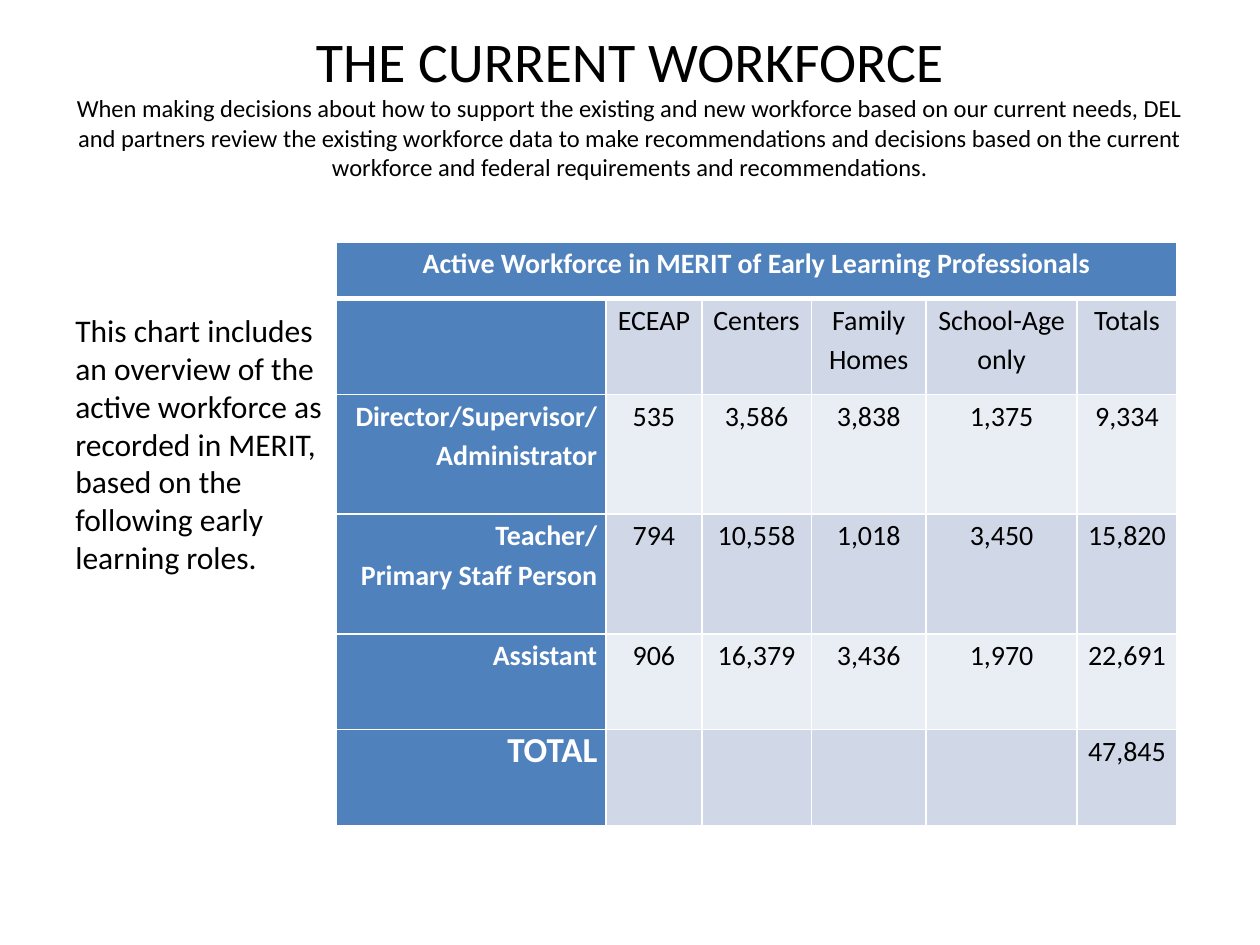
from dataclasses import dataclass

from lxml import etree
from pptx import Presentation
from pptx.dml.color import RGBColor
from pptx.enum.shapes import MSO_SHAPE
from pptx.enum.text import MSO_ANCHOR, PP_ALIGN
from pptx.oxml.ns import qn
from pptx.util import Inches, Pt

CENTER, LEFT, RIGHT = PP_ALIGN.CENTER, PP_ALIGN.LEFT, PP_ALIGN.RIGHT
TOP, MIDDLE = MSO_ANCHOR.TOP, MSO_ANCHOR.MIDDLE
RECTANGLE = MSO_SHAPE.RECTANGLE
FONT = "Calibri"
BLACK, WHITE, BLUE = "000000", "FFFFFF", "4F81BD"
BANDS = ("D0D8E8", "E9EDF4")
TABLE_TITLE = "Active Workforce in MERIT of Early Learning Professionals"
COLUMN_WIDTHS = (2.14, 0.76, 0.87, 0.91, 1.2, 0.79)


@dataclass
class Row:
    """One table row below the title row."""
    label: str
    values: tuple
    height: float
    label_size: int = 16
    label_spacing: float = 1.15


ROWS = (
    Row("", ("ECEAP", "Centers", "Family Homes", "School-Age only", "Totals"), 0.76),
    Row("Director/Supervisor/\nAdministrator",
        ("535", "3,586", "3,838", "1,375", "9,334"), 0.95),
    Row("Teacher/\nPrimary Staff Person",
        ("794", "10,558", "1,018", "3,450", "15,820"), 0.95),
    Row("Assistant", ("906", "16,379", "3,436", "1,970", "22,691"), 0.76),
    Row("TOTAL", ("", "", "", "", "47,845"), 0.76, 20, 1.0),
)


def color(value: str) -> RGBColor:
    """Turn a hex string into a colour."""
    return RGBColor.from_string(value)


def write(frame, text: str, *, size=16, ink=BLACK, bold=False,
          align=CENTER, spacing=1.0, append=False) -> None:
    """Write each line of the text as a formatted paragraph."""
    for index, line in enumerate(text.split("\n")):
        paragraph = frame.add_paragraph() if append or index else frame.paragraphs[0]
        paragraph.alignment = align
        paragraph.line_spacing = spacing
        run = paragraph.add_run()
        run.text = line
        run.font.name = FONT
        run.font.size = Pt(size)
        run.font.bold = bold
        run.font.color.rgb = color(ink)


def style_cell(cell, fill: str, top: int = 1, bottom: int = 1) -> None:
    """Give a cell its margins, white borders and fill."""
    cell.margin_left = cell.margin_right = Inches(0.07)
    cell.margin_top = cell.margin_bottom = 0
    cell.vertical_anchor = TOP
    properties = cell._tc.get_or_add_tcPr()
    for side, width in (("L", 1), ("R", 1), ("T", top), ("B", bottom)):
        line = etree.SubElement(properties, qn(f"a:ln{side}"), w=str(Pt(width)))
        solid = etree.SubElement(line, qn("a:solidFill"))
        etree.SubElement(solid, qn("a:srgbClr"), val=WHITE)
    cell.fill.solid()
    cell.fill.fore_color.rgb = color(fill)


def add_heading(slide) -> None:
    """Add the slide title and its introduction."""
    box = slide.shapes.add_textbox(Inches(0.5), Inches(0.3), Inches(9), Inches(1.25))
    frame = box.text_frame
    frame.word_wrap = True
    frame.vertical_anchor = MIDDLE
    frame.margin_top, frame.margin_bottom = 0, Inches(0.2)
    write(frame, "THE CURRENT WORKFORCE", size=32)
    write(frame, "When making decisions about how to support the existing and new "
          "workforce based on our current needs, DEL and partners review the existing "
          "workforce data to make recommendations and decisions based on the current "
          "workforce and federal requirements and recommendations.",
          size=14, append=True)


def add_explanation(slide) -> None:
    """Add the text panel left of the table."""
    panel = slide.shapes.add_shape(
        RECTANGLE, Inches(0.5), Inches(1.92), Inches(2.17), Inches(4.46))
    panel.shadow.inherit = False
    panel.fill.solid()
    panel.fill.fore_color.rgb = color(WHITE)
    panel.line.fill.background()
    frame = panel.text_frame
    frame.word_wrap = True
    frame.vertical_anchor = TOP
    frame.margin_top = Inches(0.55)
    write(frame, "This chart includes an overview of the active workforce as recorded "
          "in MERIT, based on the following early learning roles.", size=18, align=LEFT)


def add_workforce_table(slide) -> None:
    """Add the table of staff counts by role and setting."""
    heights = [0.45] + [row.height for row in ROWS]
    table = slide.shapes.add_table(
        len(heights), len(COLUMN_WIDTHS), Inches(2.67), Inches(1.92),
        Inches(sum(COLUMN_WIDTHS)), Inches(sum(heights))).table
    for column, width in zip(table.columns, COLUMN_WIDTHS):
        column.width = Inches(width)
    for table_row, height in zip(table.rows, heights):
        table_row.height = Inches(height)

    for cell in table.rows[0].cells:
        style_cell(cell, BLUE, bottom=3)
    title = table.cell(0, 0)
    title.merge(table.cell(0, len(COLUMN_WIDTHS) - 1))
    write(title.text_frame, TABLE_TITLE, ink=WHITE, bold=True, spacing=1.15)

    for index, row in enumerate(ROWS):
        top = 1 if index else 3
        label = table.cell(index + 1, 0)
        style_cell(label, BLUE, top)
        if row.label:
            write(label.text_frame, row.label, size=row.label_size, ink=WHITE,
                  bold=True, align=RIGHT, spacing=row.label_spacing)
        for column, value in enumerate(row.values, 1):
            cell = table.cell(index + 1, column)
            style_cell(cell, BANDS[index % 2 if row.label != "TOTAL" else 0], top)
            if value:
                write(cell.text_frame, value, spacing=1.15)


def main() -> None:
    """Build and save the slide."""
    presentation = Presentation()
    presentation.slide_width, presentation.slide_height = Inches(10), Inches(7.5)
    slide = presentation.slides.add_slide(presentation.slide_layouts[6])
    add_heading(slide)
    add_explanation(slide)
    add_workforce_table(slide)
    presentation.save("out.pptx")


if __name__ == "__main__":
    main()
